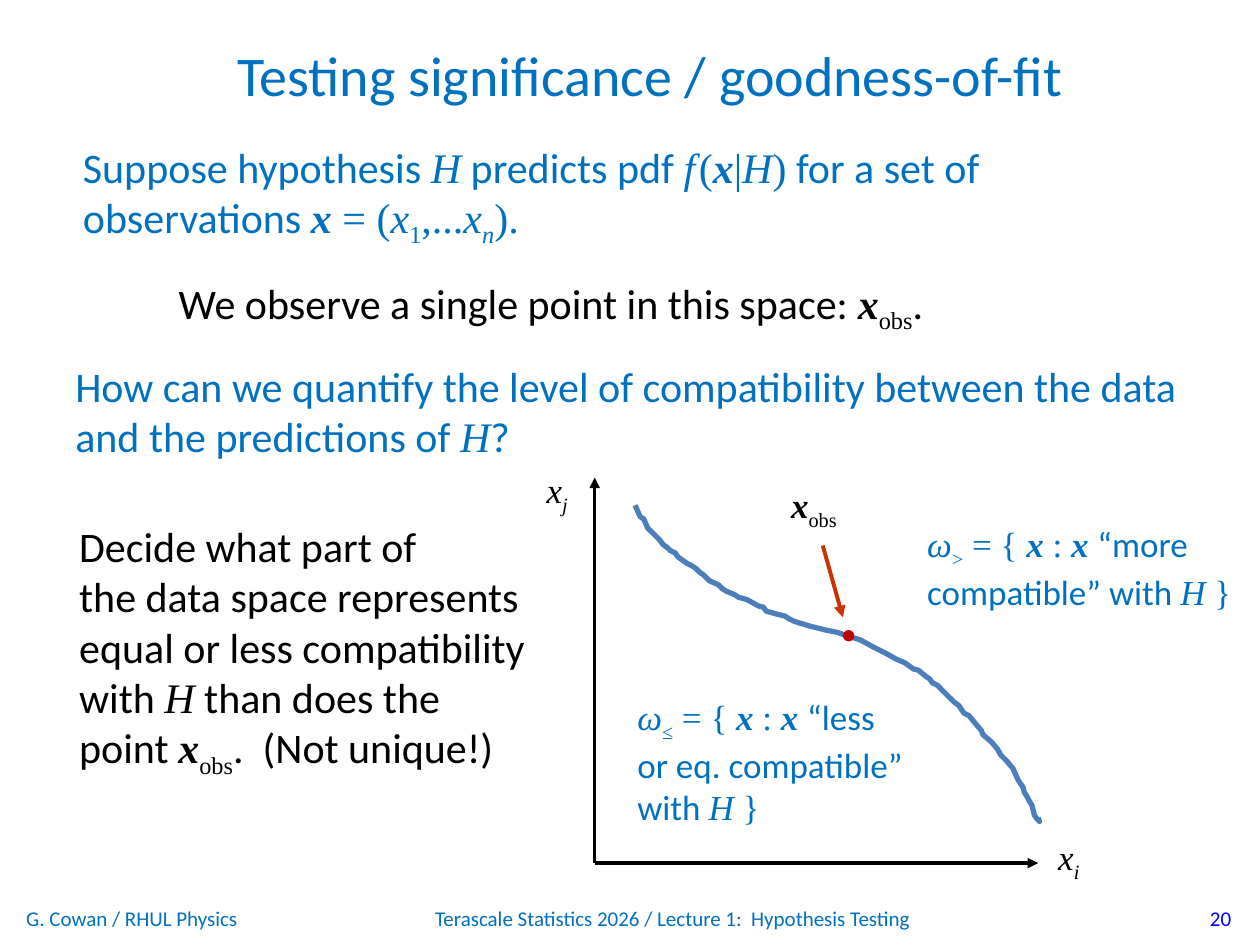
from lxml.etree import SubElement
from pptx import Presentation
from pptx.dml.color import RGBColor
from pptx.enum.shapes import MSO_CONNECTOR, MSO_SHAPE
from pptx.enum.text import MSO_ANCHOR, MSO_AUTO_SIZE, PP_ALIGN
from pptx.oxml.ns import qn
from pptx.util import Inches, Pt

COLOURS = {
    "blue": "0070C0", "number": "0000FF", "black": "000000",
    "curve": "4B7EBC", "arrow": "CC3300", "point": "C00000",
}
COLUMNS, ROWS = 100, 75
SANS, SERIF = "Calibri", "Times New Roman"

STYLES = {
    "math": {},
    "italic": {"italic": True},
    "vector": {"bold": True, "italic": True},
    "sub": {"sub": True},
    "italic sub": {"italic": True, "sub": True},
    "thin": {"size": 8},
}

H = ("italic", "H")
X = ("vector", "x")
X_OBS = [X, ("sub", "obs")]

BOUNDARY = [
    (50.4, 40.1), (50.8, 41.0), (51.1, 41.2), (51.4, 41.9), (52.1, 42.6), (52.4, 42.9),
    (52.6, 43.2), (53.0, 43.5), (53.2, 43.7), (53.6, 43.9), (53.8, 44.2), (54.5, 44.7),
    (54.9, 44.9), (55.2, 45.1), (55.5, 45.4), (55.8, 45.6), (56.3, 46.1), (57.0, 46.4),
    (57.3, 46.7), (57.6, 46.9), (58.3, 47.2), (58.6, 47.4), (59.3, 47.6), (60.2, 48.1),
    (60.6, 48.2), (60.8, 48.5), (61.5, 48.7), (62.3, 48.9), (62.6, 49.1), (63.0, 49.3),
    (63.3, 49.4), (64.3, 49.7), (65.5, 50.0), (66.5, 50.2), (67.3, 50.5), (68.0, 50.7),
    (68.3, 50.8), (69.4, 51.4), (70.4, 51.9), (71.1, 52.3), (71.8, 52.6), (72.5, 53.1),
    (72.9, 53.2), (73.5, 53.7), (73.8, 53.9), (74.0, 54.2), (74.4, 54.4), (75.2, 55.2),
    (75.5, 55.5), (75.7, 55.7), (76.1, 56.0), (76.5, 56.6), (76.9, 56.8), (77.4, 57.4),
    (77.9, 58.0), (78.0, 58.3), (78.7, 58.9), (79.2, 59.5), (79.4, 59.9), (79.9, 60.4),
    (80.4, 61.0), (80.8, 61.9), (81.2, 62.5), (81.3, 62.9), (81.5, 63.2), (81.7, 63.6),
    (81.9, 63.9), (82.1, 64.7), (82.3, 65.0), (82.5, 65.2), (82.4, 64.9),
]


class SlideBuilder:
    def __init__(self, deck):
        self.page = deck.slides.add_slide(deck.slide_layouts[5])
        self.column = deck.slide_width / COLUMNS
        self.row = deck.slide_height / ROWS

    def place(self, left, top, width, height):
        return (round(left * self.column), round(top * self.row),
                round(width * self.column), round(height * self.row))

    def colour(self, name):
        return RGBColor.from_string(COLOURS[name])

    def set_lines(self, box, lines, size, colour, align):
        frame = box.text_frame
        for index, line in enumerate(lines):
            para = frame.add_paragraph() if index else frame.paragraphs[0]
            para.alignment = align
            para.font.size = Pt(size)
            para.font.name = SANS
            para.font.color.rgb = self.colour(colour)
            for piece in line:
                span = para.add_run()
                if isinstance(piece, str):
                    span.text = piece
                    continue
                style, span.text = piece
                self.format_math(span, **STYLES[style])

    def format_math(self, span, bold=None, italic=None, sub=False, size=None):
        span.font.name = SERIF
        span.font.bold = bold
        span.font.italic = italic
        if size:
            span.font.size = Pt(size)
        if sub:
            span.font._element.set("baseline", "-25000")

    def title(self, area, text):
        box = self.page.shapes.title
        box.left, box.top, box.width, box.height = self.place(*area)
        box.text_frame.vertical_anchor = MSO_ANCHOR.TOP
        box.text_frame.auto_size = MSO_AUTO_SIZE.NONE
        self.set_lines(box, [[text]], 32, "blue", PP_ALIGN.CENTER)

    def text(self, area, lines, size=24, colour="black", align=PP_ALIGN.LEFT,
             wrap=True, anchor=MSO_ANCHOR.TOP):
        box = self.page.shapes.add_textbox(*self.place(*area))
        box.text_frame.word_wrap = wrap
        box.text_frame.vertical_anchor = anchor
        self.set_lines(box, lines, size, colour, align)

    def footer(self, area, text, align, colour="blue"):
        self.text(area, [[text]], 12, colour, align, anchor=MSO_ANCHOR.MIDDLE)

    def label(self, area, spans):
        self.text(area, [spans], 20, wrap=False)

    def arrow(self, start, end, colour, weight):
        ends = self.place(*start, *end)
        line = self.page.shapes.add_connector(MSO_CONNECTOR.STRAIGHT, *ends)
        line.line.color.rgb = self.colour(colour)
        line.line.width = Pt(weight)
        properties = line._element.spPr
        SubElement(properties.find(qn("a:ln")), qn("a:tailEnd"), type="triangle")
        SubElement(properties, qn("a:effectLst"))

    def curve(self, points, colour, weight):
        fine = [(round(x * 10), round(y * 10)) for x, y in points]
        builder = self.page.shapes.build_freeform(
            *fine[0], scale=(self.column / 10, self.row / 10))
        builder.add_line_segments(fine[1:], close=False)
        shape = builder.convert_to_shape()
        shape.shadow.inherit = False
        shape.fill.background()
        shape.line.color.rgb = self.colour(colour)
        shape.line.width = Pt(weight)

    def dot(self, area, colour):
        shape = self.page.shapes.add_shape(MSO_SHAPE.OVAL, *self.place(*area))
        shape.shadow.inherit = False
        shape.fill.solid()
        shape.fill.fore_color.rgb = self.colour(colour)
        shape.line.fill.background()


def region(sign, word):
    return [("italic", "ω"), ("sub", sign), ("math", " = { "), X,
            ("math", " : "), ("vector", "x "), "“" + word]


def main():
    deck = Presentation()
    deck.slide_width, deck.slide_height = Inches(10), Inches(7.5)
    slide = SlideBuilder(deck)

    slide.footer((75.4, 70.9, 23.3, 4), "20", PP_ALIGN.RIGHT, "number")
    slide.footer((1.1, 70.9, 23.3, 4), "G. Cowan / RHUL Physics", PP_ALIGN.LEFT)
    slide.footer((22.6, 70.9, 61.6, 4),
                 "Terascale Statistics 2026 / Lecture 1:  Hypothesis Testing", PP_ALIGN.CENTER)
    slide.title((13.8, 2.7, 75.6, 4.7), "Testing significance / goodness-of-fit")

    slide.text((5.6, 10.7, 74.5, 9.1), [
        ["Suppose hypothesis ", H, " predicts pdf ", ("italic", "f"), ("thin", " "),
         ("math", "("), X, ("math", "|"), H, ("math", ")"), " for a set of"],
        ["observations ", X, ("math", " = ("), ("italic", "x"), ("sub", "1"),
         ("math", ",..."), ("italic", "x"), ("italic sub", "n"), ("math", ").")],
    ], colour="blue", wrap=False)
    slide.text((13.2, 21.5, 62.8, 5),
               [["We observe a single point in this space: ", *X_OBS, "."]], wrap=False)
    slide.text((5, 28.1, 92.7, 9.1), [
        ["How can we quantify the level of compatibility between the data "
         "and the predictions of ", H, "?"]], colour="blue")
    slide.text((5.3, 40.8, 38.2, 21.2), [
        ["Decide what part of"],
        ["the data space represents equal or less compatibility with ", H,
         " than does the point ", *X_OBS, ".  (Not unique!)"]])

    slide.curve(BOUNDARY, "curve", 3)
    slide.text((49.6, 54.7, 28.8, 11.1), [
        region("≤", "less"), ["or eq. compatible”"], ["with ", H, ("math", " }")],
    ], 20, "blue")
    slide.text((72.6, 41, 27.1, 7.7), [
        region(">", "more"), ["compatible” with ", H, ("math", " }")],
    ], 20, "blue")

    origin = (47.2, 68.5)
    slide.arrow((65.3, 43.3), (66.9, 49), "arrow", 2.25)
    slide.arrow(origin, (82.4, 68.5), "black", 2)
    slide.arrow(origin, (47.2, 37.9), "black", 2)
    slide.dot((66.9, 50, 0.9, 0.9), "point")
    slide.label((61.8, 37.9, 6, 4.4), X_OBS)
    slide.label((83, 65.8, 3.8, 4.4), [("italic", "x"), ("italic sub", "i")])
    slide.label((42.4, 36.7, 3.8, 4.4), [("italic", "x"), ("italic sub", "j")])

    deck.save("out.pptx")


if __name__ == "__main__":
    main()
